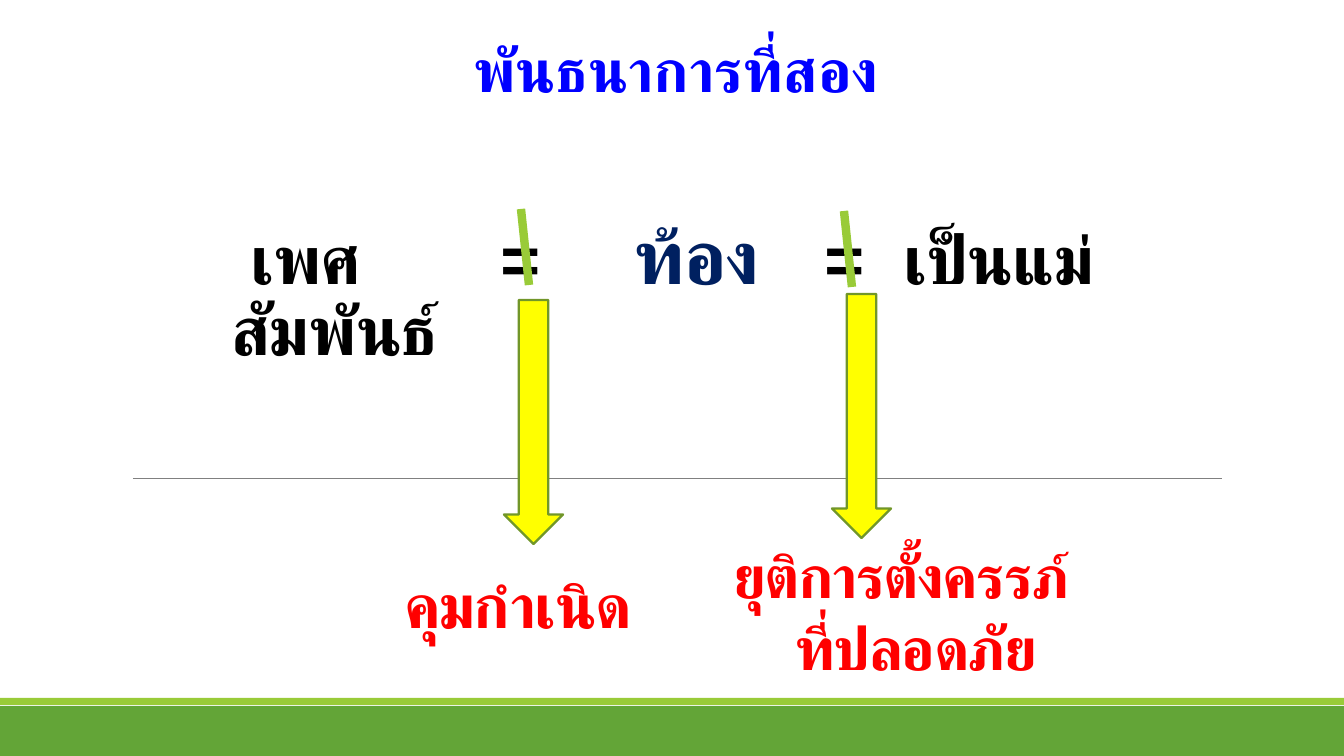
"""Build the slide about the second bond: pregnancy, birth control and safe termination."""
import pptx
import pptx.dml.color
import pptx.enum.shapes
import pptx.enum.text
import pptx.oxml.ns
import pptx.util
from lxml import etree

SLIDE_WIDTH, SLIDE_HEIGHT = 1344, 756
EMU_PER_PX = 9144000 / SLIDE_WIDTH
FONT = "Courier New"
RED, BLACK, NAVY, BLUE = "FF0000", "000000", "002060", "0000FF"
GREEN, LIME, YELLOW, OLIVE, GRAY = "63A537", "99CB38", "FFFF00", "719629", "808080"
TOP = pptx.enum.text.MSO_ANCHOR.TOP
BOTTOM = pptx.enum.text.MSO_ANCHOR.BOTTOM
RECTANGLE = pptx.enum.shapes.MSO_SHAPE.RECTANGLE
DOWN_ARROW = pptx.enum.shapes.MSO_SHAPE.DOWN_ARROW


def px(length):
    """Turn pixels into EMU."""
    return pptx.util.Emu(round(length * EMU_PER_PX))


def color(value):
    """Turn a hex string into a colour."""
    return pptx.dml.color.RGBColor.from_string(value)


def apply(target, values):
    """Set each attribute in the dict on the target."""
    for name, value in values.items():
        setattr(target, name, value)


def add_block(slide, kind, box, fill, outline=None):
    """Add a filled preset shape, outlined if a colour is given."""
    shape = slide.shapes.add_shape(kind, *map(px, box))
    shape.shadow.inherit = False
    shape.fill.solid()
    shape.fill.fore_color.rgb = color(fill)
    if outline:
        shape.line.color.rgb = color(outline)
        shape.line.width = pptx.util.Pt(1.25)
    else:
        shape.line.fill.background()


def add_line(slide, ends, stroke, width):
    """Add a straight line without a shadow."""
    straight = pptx.enum.shapes.MSO_CONNECTOR.STRAIGHT
    connector = slide.shapes.add_connector(straight, *map(px, ends))
    connector.line.color.rgb = color(stroke)
    connector.line.width = pptx.util.Pt(width)
    properties = connector._element.spPr
    etree.SubElement(properties, pptx.oxml.ns.qn("a:effectLst"))


def add_text_box(slide, box, anchor):
    """Add a wrapping text box and return its text frame."""
    frame = slide.shapes.add_textbox(*map(px, box)).text_frame
    apply(frame, {"word_wrap": True, "vertical_anchor": anchor})
    return frame


def add_run(paragraph, text, size, fill, spacing=0):
    """Add a bold run with letter spacing in hundredths of a point."""
    run = paragraph.add_run()
    run.text = text
    apply(run.font, {"name": FONT, "size": pptx.util.Pt(size), "bold": True})
    run.font.color.rgb = color(fill)
    if spacing:
        run._r.get_or_add_rPr().set("spc", str(spacing))


def add_title(slide):
    """Add the centred heading."""
    paragraph = add_text_box(slide, (260, 26, 832, 86), TOP).paragraphs[0]
    paragraph.alignment = pptx.enum.text.PP_ALIGN.CENTER
    add_run(paragraph, "พันธนาการที่สอง", 32, BLUE)


def add_equation(slide):
    """Add the chain of terms, aligned by the default tab grid."""
    paragraph = add_text_box(slide, (218, 159, 957, 217), BOTTOM).paragraphs[0]
    paragraph.line_spacing = 0.85
    paragraph._p.get_or_add_pPr().set("indent", str(px(19)))
    add_run(paragraph, "เพศ\t\t\t=\t\t", 36.5, BLACK, -50)
    add_run(paragraph, "ท้อง", 40.5, NAVY, -50)
    add_run(paragraph, "\t", 36.5, BLACK, -50)
    add_run(paragraph, " ", 36.5, BLACK, 1930)
    add_run(paragraph, "=\tเป็นแม่", 36.5, BLACK, -50)
    paragraph.add_line_break()
    add_run(paragraph, "สัมพันธ์", 36.5, BLACK, -50)


def add_label(slide, box, size, lines):
    """Add a red label from pairs of text and left indent."""
    frame = add_text_box(slide, box, BOTTOM)
    for index, (text, indent) in enumerate(lines):
        paragraph = frame.add_paragraph() if index else frame.paragraphs[0]
        if indent:
            paragraph._p.get_or_add_pPr().set("marL", str(px(indent)))
        add_run(paragraph, text, size, RED, -80)


def main():
    """Build and save the slide."""
    presentation = pptx.Presentation()
    apply(presentation, {"slide_width": px(SLIDE_WIDTH), "slide_height": px(SLIDE_HEIGHT)})
    slide = presentation.slides.add_slide(presentation.slide_layouts[6])
    add_block(slide, RECTANGLE, (0, 706, SLIDE_WIDTH, 50), GREEN)
    add_block(slide, RECTANGLE, (0, 698, SLIDE_WIDTH, 7), LIME)
    add_line(slide, (133, 479, 1222, 479), GRAY, 0.5)
    add_equation(slide)
    for arrow_left, arrow_top, slash_left, slash_top in ((504, 300, 521, 209), (832, 294, 844, 211)):
        add_block(slide, DOWN_ARROW, (arrow_left, arrow_top, 59, 244), YELLOW, OLIVE)
        add_line(slide, (slash_left, slash_top, slash_left + 8, slash_top + 76), LIME, 4.5)
    add_label(slide, (391, 521, 285, 127), 33, [("คุมกำเนิด", 0)])
    add_label(slide, (720, 556, 473, 133), 32, [("ยุติการตั้งครรภ์", 0), ("ที่ปลอดภัย", 62)])
    add_title(slide)
    presentation.save("out.pptx")


if __name__ == "__main__":
    main()
